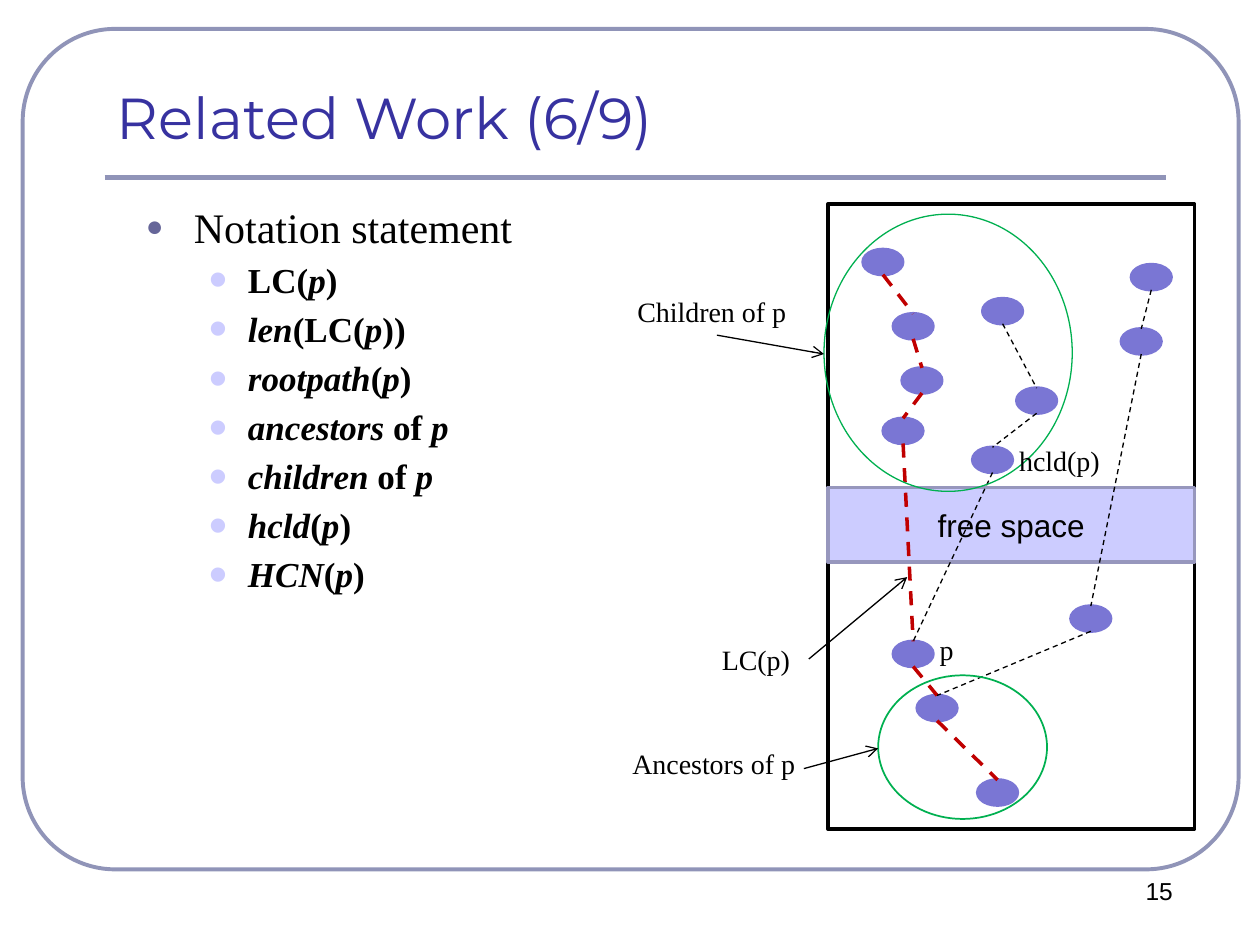
import pptx
import pptx.util
import pptx.dml.color
import pptx.enum.dml
import pptx.enum.shapes
import pptx.enum.text
import pptx.oxml.ns
from lxml import etree
from pptx.util import Inches

COLORS = {
    "frame": "9094B8", "title": "3732A0", "text": "000000", "paper": "FFFFFF",
    "bullet": "666699", "sub_bullet": "CCCCFF", "free": "CCCCFF",
    "free_edge": "9797BD", "node": "7A76D4", "chain": "C00000", "group": "00B050",
}
SHAPES = pptx.enum.shapes.MSO_SHAPE
ANCHOR = pptx.enum.text.MSO_ANCHOR
ALIGN = pptx.enum.text.PP_ALIGN
SERIF = "Times New Roman"

# Text between asterisks is italic
NOTATIONS = ["LC(*p*)", "*len*(LC(*p*))", "*rootpath*(*p*)", "*ancestors* of *p*",
             "*children* of *p*", "*hcld*(*p*)", "*HCN*(*p*)"]

# Left and top of each node; all nodes have one size
NODE_WIDTH, NODE_HEIGHT = 0.315, 0.2
NODES = {
    "leaf": (6.85, 1.98), "child 3": (7.09, 2.49), "child 2": (7.16, 2.92),
    "child 1": (7.01, 3.32), "p": (7.09, 5.09), "parent": (7.28, 5.52),
    "root": (7.76, 6.19), "side 1": (8.5, 4.81), "side 2": (8.9, 2.61),
    "side 3": (8.98, 2.1), "hcld": (7.72, 3.55), "inner 2": (8.07, 3.08),
    "inner 3": (7.8, 2.37),
}
# Paths run from top to bottom
LONGEST_CHAIN = ["leaf", "child 3", "child 2", "child 1", "p", "parent", "root"]
OTHER_PATHS = [["side 3", "side 2", "side 1", "parent"],
               ["inner 3", "inner 2", "hcld", "p"]]

NODE_LABELS = [("p", 7.36, 4.97, 0.31), ("LC(p)", 5.63, 5.05, 0.79),
               ("hcld(p)", 7.99, 3.47, 0.9)]
GROUP_LABELS = [("Children of p", 4.96, 2.29, 1.46), ("Ancestors of p", 4.92, 5.88, 1.53)]
GROUPS = [((6.54, 1.7, 1.97, 2.2), 0.75), ((6.97, 5.36, 1.34, 1.14), 1)]
ARROWS = [((6.42, 5.23), (7.2, 4.58)), ((5.69, 2.66), (6.54, 2.81)),
          ((6.38, 6.1), (6.97, 5.94))]


def rgb(name):
    return pptx.dml.color.RGBColor.from_string(COLORS[name])


def apply(target, values):
    for name, value in values.items():
        setattr(target, name, value)


def add_element(parent, tag, **attributes):
    return etree.SubElement(parent, pptx.oxml.ns.qn(tag), attributes)


def add_run(paragraph, text, size, font=SERIF, color="text", **extra):
    run = paragraph.add_run()
    run.text = text
    apply(run.font, {"size": pptx.util.Pt(size), "name": font, **extra})
    run.font.color.rgb = rgb(color)


def add_shape(slide, kind, box, line, width, fill=None):
    shape = slide.shapes.add_shape(kind, *map(Inches, box))
    shape.shadow.inherit = False
    if fill:
        shape.fill.solid()
        shape.fill.fore_color.rgb = rgb(fill)
    else:
        shape.fill.background()
    shape.line.color.rgb = rgb(line)
    shape.line.width = pptx.util.Pt(width)
    return shape


def add_line(slide, start, end, color, width, dashed=False, arrow=False):
    connector = slide.shapes.add_connector(
        pptx.enum.shapes.MSO_CONNECTOR.STRAIGHT, *map(Inches, (*start, *end)))
    connector.line.color.rgb = rgb(color)
    connector.line.width = pptx.util.Pt(width)
    if dashed:
        connector.line.dash_style = pptx.enum.dml.MSO_LINE.DASH
    if arrow:
        add_element(connector.line._get_or_add_ln(), "a:tailEnd", type="arrow")
    add_element(connector._element.spPr, "a:effectLst")


def add_text_box(slide, box, **values):
    frame = slide.shapes.add_textbox(*map(Inches, box)).text_frame
    apply(frame, {"word_wrap": True, **values})
    return frame


def add_label(slide, text, left, top, width):
    frame = add_text_box(slide, (left, top, width, 0.37), word_wrap=False,
                         auto_size=pptx.enum.text.MSO_AUTO_SIZE.SHAPE_TO_FIT_TEXT)
    add_run(frame.paragraphs[0], text, 16)


def set_bullet(paragraph, margin, hanging, symbol, color, percent):
    properties = paragraph._p.get_or_add_pPr()
    properties.set("marL", str(Inches(margin)))
    properties.set("indent", str(Inches(-hanging)))
    spacing = add_element(properties, "a:spcBef")
    add_element(spacing, "a:spcPct", val="20000")
    add_element(add_element(properties, "a:buClr"), "a:srgbClr", val=COLORS[color])
    add_element(properties, "a:buSzPct", val=str(percent * 1000))
    add_element(properties, "a:buFont", typeface="Arial")
    add_element(properties, "a:buChar", char=symbol)


def add_notation_list(slide):
    frame = add_text_box(slide, (1.06, 1.55, 4.72, 5))
    heading = frame.paragraphs[0]
    set_bullet(heading, 0.38, 0.38, "●", "bullet", 70)
    add_run(heading, "Notation statement", 24)
    for notation in NOTATIONS:
        paragraph = frame.add_paragraph()
        paragraph.level = 1
        set_bullet(paragraph, 0.81, 0.31, "•", "sub_bullet", 150)
        for index, part in enumerate(notation.split("*")):
            if part:
                add_run(paragraph, part, 20, bold=True, italic=index % 2 == 1)


def add_path(slide, names, color, width):
    for upper, lower in zip(names, names[1:]):
        (left, top), (next_left, next_top) = NODES[upper], NODES[lower]
        add_line(slide, (left + NODE_WIDTH / 2, top + NODE_HEIGHT),
                 (next_left + NODE_WIDTH / 2, next_top), color, width, dashed=True)


def add_tree(slide):
    # Memory area with its free space
    add_shape(slide, SHAPES.RECTANGLE, (6.57, 1.62, 2.91, 4.96), "text", 2, "paper")
    free = add_shape(slide, SHAPES.RECTANGLE, (6.57, 3.87, 2.91, 0.59), "free_edge", 2, "free")
    free.text_frame.vertical_anchor = ANCHOR.MIDDLE
    paragraph = free.text_frame.paragraphs[0]
    paragraph.alignment = ALIGN.CENTER
    add_run(paragraph, "free space", 18, "Arial")

    # Nodes and paths
    for left, top in NODES.values():
        add_shape(slide, SHAPES.OVAL, (left, top, NODE_WIDTH, NODE_HEIGHT), "node", 2, "node")
    add_path(slide, LONGEST_CHAIN, "chain", 2)
    for names in OTHER_PATHS:
        add_path(slide, names, "text", 0.75)

    # Groups, labels and arrows
    for box, width in GROUPS:
        add_shape(slide, SHAPES.OVAL, box, "group", width)
    for label in NODE_LABELS + GROUP_LABELS:
        add_label(slide, *label)
    for start, end in ARROWS:
        add_line(slide, start, end, "text", 0.75, arrow=True)


def main():
    presentation = pptx.Presentation()
    apply(presentation, {"slide_width": Inches(10), "slide_height": Inches(7.5)})
    slide = presentation.slides.add_slide(presentation.slide_layouts[6])

    # Frame and title
    frame = add_shape(slide, SHAPES.ROUNDED_RECTANGLE, (0.18, 0.23, 9.65, 6.67), "frame", 2.25)
    frame.adjustments[0] = 0.11
    add_line(slide, (0.83, 1.41), (9.25, 1.41), "frame", 3)
    title = add_text_box(slide, (0.83, 0.6, 8.42, 0.65), vertical_anchor=ANCHOR.BOTTOM)
    add_run(title.paragraphs[0], "Related Work (6/9)", 33, "Montserrat", "title")

    add_notation_list(slide)

    # Page number
    number = add_text_box(slide, (8.66, 6.9, 1.08, 0.5)).paragraphs[0]
    number.alignment = ALIGN.CENTER
    add_run(number, "15", 14, "Arial")

    add_tree(slide)
    presentation.save("out.pptx")


if __name__ == "__main__":
    main()
